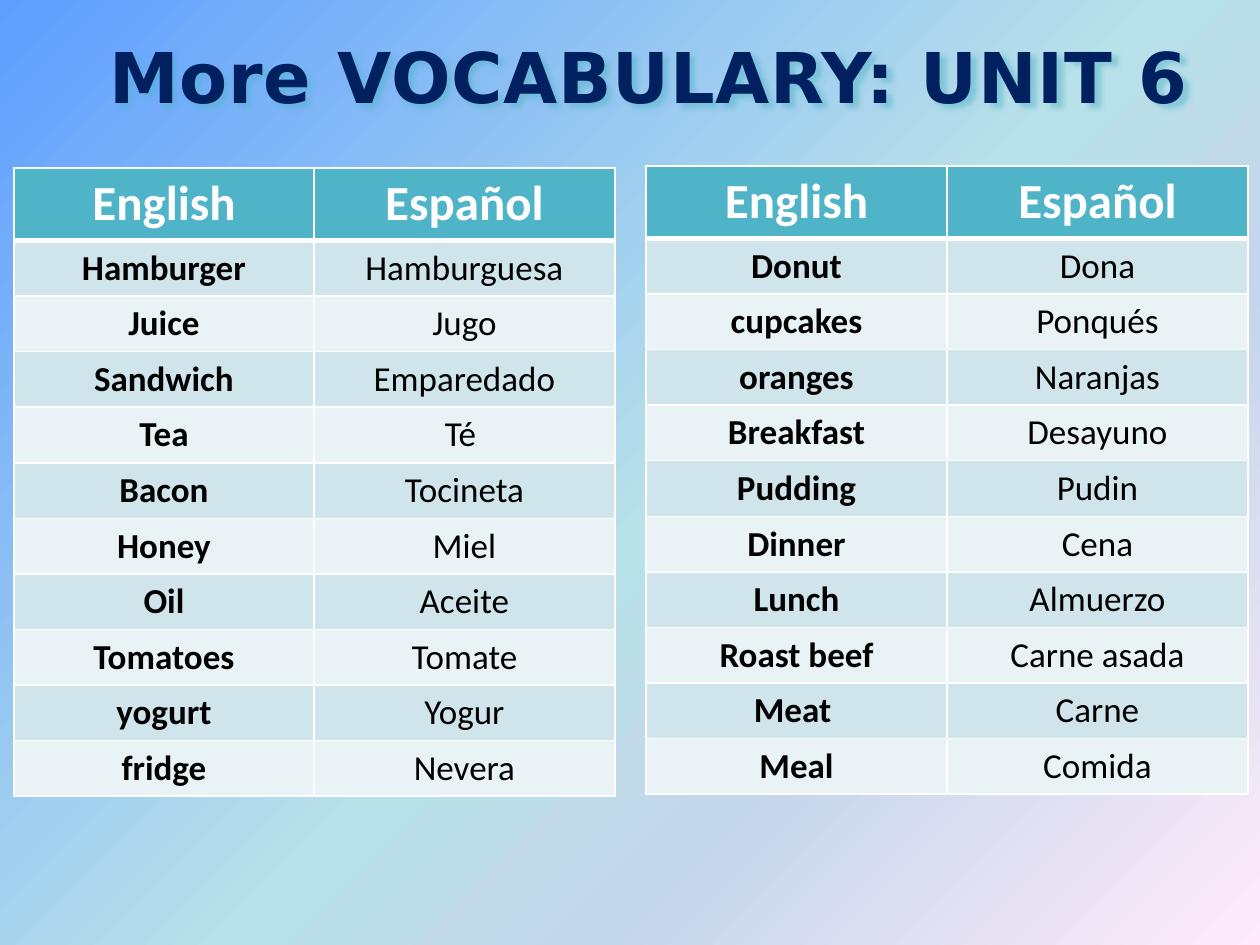
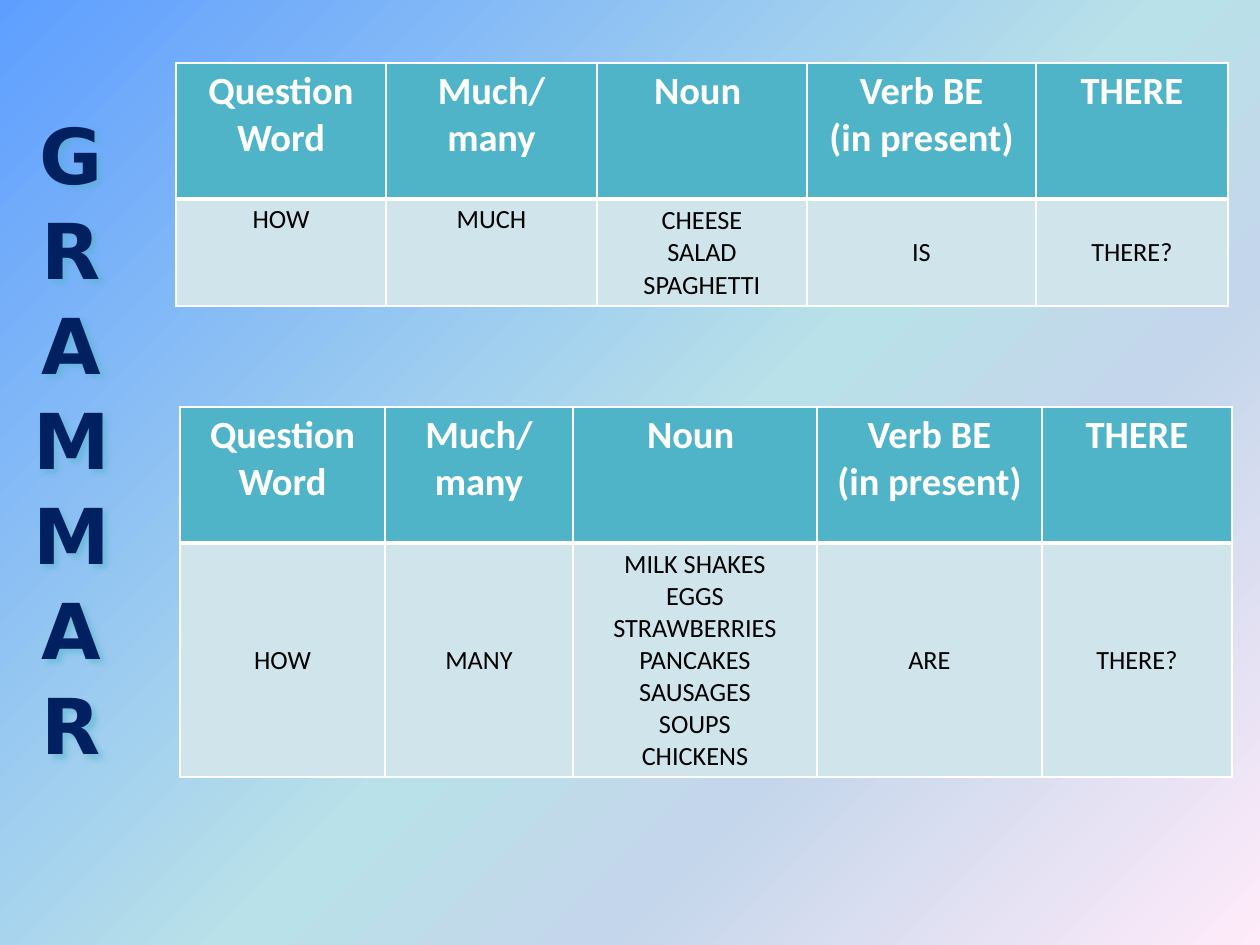
from dataclasses import dataclass

from lxml.etree import SubElement
from pptx import Presentation
from pptx.dml.color import RGBColor
from pptx.enum.text import MSO_ANCHOR, MSO_AUTO_SIZE, PP_ALIGN
from pptx.oxml.ns import qn
from pptx.util import Pt

EMU_PER_PX = 914400 / 126


def px(length):
    return round(length * EMU_PER_PX)


@dataclass(frozen=True)
class Theme:
    # Colours
    title_color: str = "002060"
    header_fill: str = "50B4C8"
    header_text: str = "FFFFFF"
    body_text: str = "000000"
    border: str = "FFFFFF"
    bands: tuple = ("D0E5EB", "E9F2F5")
    gradient: tuple = ((0, "5E9EFF"), (53, "B9E1E9"), (70, "C4D6EB"), (100, "FFEBFA"))
    # Fonts and sizes in points
    title_font: str = "DejaVu Sans"
    table_font: str = "Calibri"
    title_size: int = 40
    letter_size: int = 44
    vocabulary_sizes: tuple = (28, 20)
    grammar_sizes: tuple = (22, 15)
    thin_line: int = 1
    thick_line: int = 3


class Deck:
    """Holds the style and the current slide."""

    def __init__(self, theme):
        self.theme = theme
        self.presentation = Presentation()
        self.presentation.slide_width = px(1260)
        self.presentation.slide_height = px(945)
        self.slide = None
        self.paint_background()

    def paint_background(self):
        master = self.presentation.slide_master
        fill = master.background.fill
        fill.gradient()
        fill.gradient_angle = 315
        stops = master.element.find(".//" + qn("a:gsLst"))
        for stop in list(stops):
            stops.remove(stop)
        for position, color in self.theme.gradient:
            stop = SubElement(stops, qn("a:gs"), pos=str(position * 1000))
            SubElement(stop, qn("a:srgbClr"), val=color)

    def new_slide(self):
        title_only = self.presentation.slide_layouts[5]
        self.slide = self.presentation.slides.add_slide(title_only)

    def add_lines(self, frame, lines, font_name, size, color, bold, line_spacing=None):
        """Add centred lines, one paragraph each, and return the runs."""
        runs = []
        for index, line in enumerate(lines):
            paragraph = frame.add_paragraph() if index else frame.paragraphs[0]
            paragraph.alignment = PP_ALIGN.CENTER
            if line_spacing:
                paragraph.line_spacing = line_spacing
            run = paragraph.add_run()
            run.text = line
            run.font.name = font_name
            run.font.size = Pt(size)
            run.font.bold = bold
            run.font.color.rgb = RGBColor.from_string(color)
            runs.append(run)
        return runs

    def title(self, lines, left, top, width, height, size):
        shape = self.slide.shapes.title
        shape.left, shape.top = px(left), px(top)
        shape.width, shape.height = px(width), px(height)
        frame = shape.text_frame
        frame.word_wrap = True
        frame.auto_size = MSO_AUTO_SIZE.NONE
        frame.vertical_anchor = MSO_ANCHOR.TOP
        runs = self.add_lines(frame, lines, self.theme.title_font, size,
                              self.theme.title_color, True, 1.03)
        for run in runs:
            run.font._element.set("spc", "50")
        self.soft_shadow(shape)

    def soft_shadow(self, shape):
        effects = SubElement(shape._element.spPr, qn("a:effectLst"))
        shadow = SubElement(effects, qn("a:outerShdw"), blurRad="38100",
                            dist="32000", dir="2700000", algn="tl")
        color = SubElement(shadow, qn("a:srgbClr"), val=self.theme.header_fill)
        SubElement(color, qn("a:alpha"), val="50000")

    def borders(self, cell, bottom, top):
        properties = cell._tc.get_or_add_tcPr()
        thin = self.theme.thin_line
        for side, width in (("L", thin), ("R", thin), ("T", top), ("B", bottom)):
            line = SubElement(properties, qn(f"a:ln{side}"), w=str(Pt(width)))
            fill = SubElement(line, qn("a:solidFill"))
            SubElement(fill, qn("a:srgbClr"), val=self.theme.border)

    def table(self, rows, left, top, widths, header_height, body_height, sizes,
              bold_first=False, margins=None, top_columns=()):
        """Draw a header row over banded rows that share the body height."""
        theme = self.theme
        frame = self.slide.shapes.add_table(
            len(rows), len(widths), px(left), px(top),
            px(sum(widths)), px(header_height + body_height))
        table = frame.table
        for column, width in zip(table.columns, widths):
            column.width = px(width)
        for r, row in enumerate(rows):
            header = r == 0
            table.rows[r].height = px(
                header_height if header else body_height / (len(rows) - 1))
            for c, text in enumerate(row):
                cell = table.cell(r, c)
                self.borders(cell,
                             bottom=theme.thick_line if header else theme.thin_line,
                             top=theme.thick_line if r == 1 else theme.thin_line)
                cell.fill.solid()
                cell.fill.fore_color.rgb = RGBColor.from_string(
                    theme.header_fill if header else theme.bands[(r - 1) % 2])
                at_top = header or c in top_columns
                cell.vertical_anchor = MSO_ANCHOR.TOP if at_top else MSO_ANCHOR.MIDDLE
                if margins:
                    cell.margin_top, cell.margin_bottom = map(px, margins)
                self.add_lines(cell.text_frame, text.split("\n"), theme.table_font,
                               sizes[0] if header else sizes[1],
                               theme.header_text if header else theme.body_text,
                               header or (bold_first and c == 0))


VOCABULARY_HEADER = ("English", "Español")
FOOD_WORDS = (
    ("Hamburger", "Hamburguesa"), ("Juice", "Jugo"), ("Sandwich", "Emparedado"),
    ("Tea", "Té "), ("Bacon", "Tocineta"), ("Honey", "Miel"), ("Oil", "Aceite"),
    ("Tomatoes", "Tomate"), ("yogurt", "Yogur"), ("fridge", "Nevera"),
)
MEAL_WORDS = (
    ("Donut", "Dona"), ("cupcakes", "Ponqués"), ("oranges", "Naranjas"),
    ("Breakfast", "Desayuno"), ("Pudding", "Pudin"), ("Dinner", "Cena"),
    ("Lunch", "Almuerzo"), ("Roast beef", "Carne asada"), ("Meat ", "Carne"),
    ("Meal", "Comida"),
)
GRAMMAR_HEADER = ("Question Word", "Much/ many", "Noun ",
                  "Verb BE\n(in present)", "THERE")
MUCH_QUESTION = ("HOW", "MUCH", "CHEESE\nSALAD\nSPAGHETTI", "IS", "THERE?")
MANY_QUESTION = (
    "HOW", "MANY",
    "MILK SHAKES\nEGGS\nSTRAWBERRIES\nPANCAKES\nSAUSAGES\nSOUPS\nCHICKENS",
    "ARE", "THERE?",
)


def vocabulary_slide(deck):
    deck.new_slide()
    deck.title(["More VOCABULARY: UNIT 6"], 38, 25, 1222, 97, deck.theme.title_size)
    for words, left, top, widths in ((FOOD_WORDS, 14, 168, (300, 301)),
                                     (MEAL_WORDS, 646, 166, (301, 301))):
        deck.table((VOCABULARY_HEADER, *words), left, top, widths, 72, 556,
                   deck.theme.vocabulary_sizes, bold_first=True)


def grammar_slide(deck):
    deck.new_slide()
    deck.title("GRAMMAR", 13, 98, 117, 665, deck.theme.letter_size)
    for question, left, top, widths, body_height, top_columns in (
            (MUCH_QUESTION, 176, 63, (210, 211, 210, 229, 192), 107, (0, 1)),
            (MANY_QUESTION, 180, 407, (205, 188, 244, 225, 190), 233, ())):
        deck.table((GRAMMAR_HEADER, question), left, top, widths, 136, body_height,
                   deck.theme.grammar_sizes, margins=(5, 4), top_columns=top_columns)


def main():
    deck = Deck(Theme())
    vocabulary_slide(deck)
    grammar_slide(deck)
    deck.presentation.save("out.pptx")


if __name__ == "__main__":
    main()
